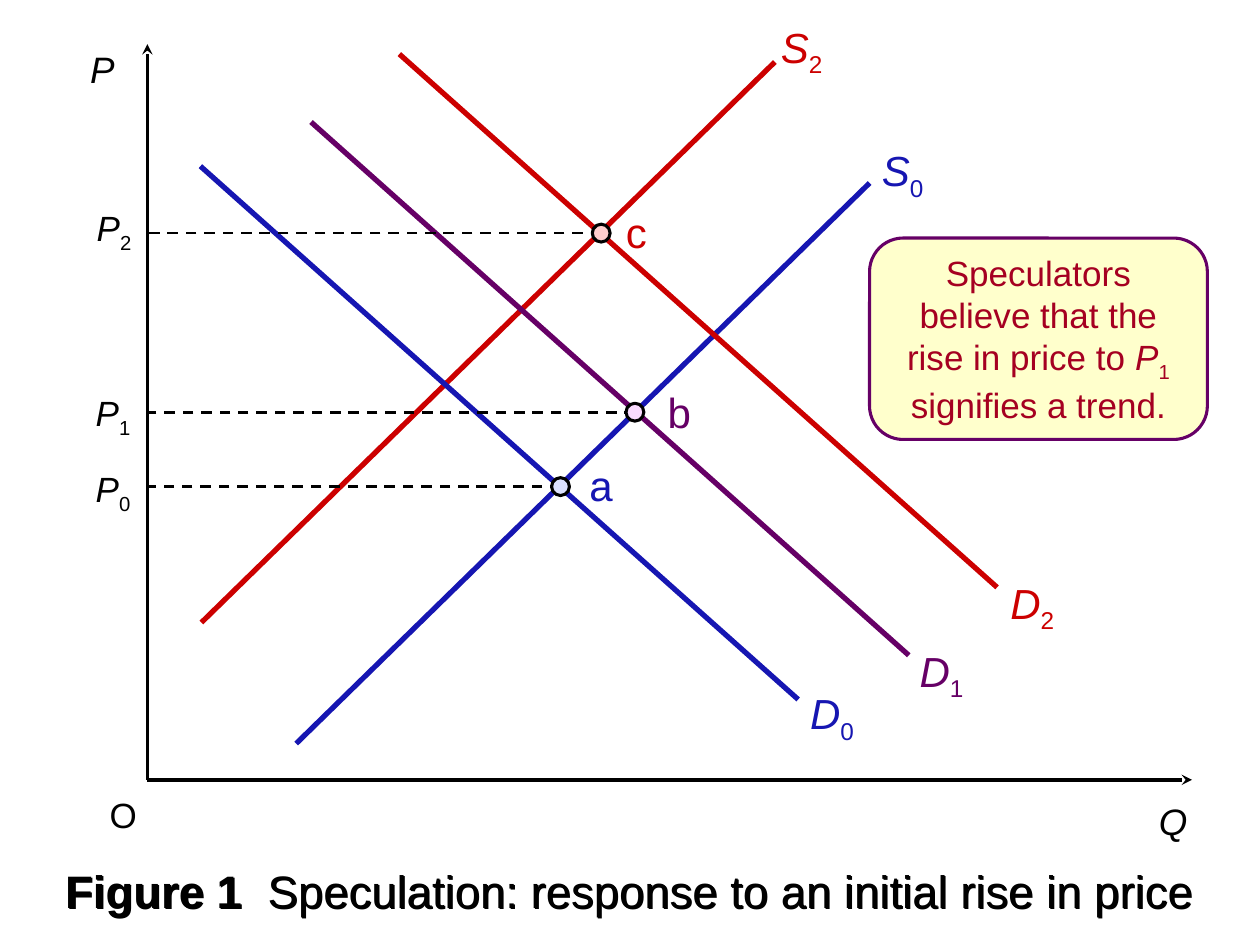
from dataclasses import dataclass

from lxml import etree
from pptx import Presentation
from pptx.dml.color import RGBColor as Rgb
from pptx.enum.dml import MSO_LINE_DASH_STYLE as Dash
from pptx.enum.shapes import MSO_CONNECTOR_TYPE as Connector
from pptx.enum.shapes import MSO_SHAPE as Shape
from pptx.enum.text import MSO_ANCHOR as Anchor
from pptx.enum.text import MSO_AUTO_SIZE as AutoSize
from pptx.enum.text import PP_ALIGN as Align
from pptx.oxml.ns import qn
from pptx.util import Cm, Pt


@dataclass(frozen=True)
class Theme:
    font: str = "Arial"
    black: str = "000000"
    blue: str = "1616B2"
    purple: str = "660066"
    red: str = "CC0000"
    crimson: str = "A50021"
    cream: str = "FFFFCC"
    pale_blue: str = "DCE1FF"
    pale_purple: str = "F9DAFE"
    pale_red: str = "FFCCCC"
    title_size: float = 26
    curve_size: float = 24
    axis_size: float = 21
    price_size: float = 20
    curve_width: float = 3
    axis_width: float = 2
    outline_width: float = 1.75
    guide_width: float = 1.5


THEME = Theme()
PLAIN, BOLD, ITALIC = {}, {"bold": True}, {"italic": True}
SUBSCRIPT = "subscript"


def assign(target, values):
    for name, value in values.items():
        setattr(target, name, value)


def symbol(letter, index):
    return [(letter, ITALIC), (index, SUBSCRIPT)]


class DiagramSlide:
    def __init__(self, slide, theme):
        self.slide = slide
        self.theme = theme

    def add_words(self, frame, runs, size, color, align=Align.LEFT):
        paragraph = frame.paragraphs[0]
        paragraph.alignment = align
        for text, style in runs:
            run = paragraph.add_run()
            run.text = text
            values = {"name": self.theme.font, "size": Pt(size),
                      "bold": False, "italic": False}
            if style == SUBSCRIPT:
                run._r.get_or_add_rPr().set("baseline", "-25000")
            else:
                values.update(style)
            assign(run.font, values)
            run.font.color.rgb = Rgb.from_string(color)

    def title(self, runs, left, top, width, height):
        heading = self.slide.shapes.title
        assign(heading, {"left": Cm(left), "top": Cm(top),
                         "width": Cm(width), "height": Cm(height)})
        assign(heading.text_frame, {"word_wrap": True, "auto_size": AutoSize.NONE,
                                    "vertical_anchor": Anchor.MIDDLE})
        self.add_words(heading.text_frame, runs, self.theme.title_size,
                       self.theme.black, Align.CENTER)
        effects = etree.SubElement(heading._element.spPr, qn("a:effectLst"))
        shadow = etree.SubElement(effects, qn("a:outerShdw"),
                                  dist="12700", dir="2700000")
        etree.SubElement(shadow, qn("a:srgbClr"), val=self.theme.black)

    def label(self, runs, left, top, width, size, color):
        box = self.slide.shapes.add_textbox(Cm(left), Cm(top), Cm(width), Cm(size * 0.054))
        assign(box.text_frame, {"word_wrap": False,
                                "auto_size": AutoSize.SHAPE_TO_FIT_TEXT})
        self.add_words(box.text_frame, runs, size, color)

    def line(self, start, end, color, width, dash=None, arrow=False):
        connector = self.slide.shapes.add_connector(
            Connector.STRAIGHT, *(Cm(value) for value in (*start, *end)))
        connector.line.color.rgb = Rgb.from_string(color)
        assign(connector.line, {"width": Pt(width), "dash_style": dash})
        if arrow:
            etree.SubElement(connector.get_or_add_ln(), qn("a:tailEnd"), type="stealth")
        etree.SubElement(connector._element.spPr, qn("a:effectLst"))

    def shape(self, preset, left, top, width, height, fill, outline):
        figure = self.slide.shapes.add_shape(preset, Cm(left), Cm(top), Cm(width), Cm(height))
        figure.shadow.inherit = False
        figure.fill.solid()
        figure.fill.fore_color.rgb = Rgb.from_string(fill)
        figure.line.color.rgb = Rgb.from_string(outline)
        figure.line.width = Pt(self.theme.outline_width)
        return figure

    def point(self, center, fill, diameter=0.36):
        x, y = center
        self.shape(Shape.OVAL, x - diameter / 2, y - diameter / 2,
                   diameter, diameter, fill, self.theme.black)

    def callout(self, runs, left, top, width, height):
        note = self.shape(Shape.FLOWCHART_ALTERNATE_PROCESS, left, top, width, height,
                          self.theme.cream, self.theme.purple)
        assign(note.text_frame, {"word_wrap": True, "vertical_anchor": Anchor.MIDDLE})
        self.add_words(note.text_frame, runs, self.theme.price_size,
                       self.theme.crimson, Align.CENTER)


def main():
    deck = Presentation()
    assign(deck, {"slide_width": Cm(25.4), "slide_height": Cm(19.05)})
    diagram = DiagramSlide(deck.slides.add_slide(deck.slide_layouts[5]), THEME)

    origin = (2.97, 15.72)
    supply_run, demand_run = (11.56, -11.3), (12.05, 10.75)
    curves = [
        ("S", "2", (4.06, 12.55), supply_run, (15.49, 0.3), THEME.red),
        ("D", "0", (4.04, 3.35), demand_run, (16.08, 13.74), THEME.blue),
        ("D", "1", (6.27, 2.46), demand_run, (18.29, 12.88), THEME.purple),
        ("S", "0", (5.97, 14.99), supply_run, (17.53, 2.79), THEME.blue),
        ("D", "2", (8.05, 1.09), demand_run, (20.12, 11.51), THEME.red),
    ]
    for letter, index, start, run, place, color in curves:
        end = (start[0] + run[0], start[1] + run[1])
        diagram.line(start, end, color, THEME.curve_width)
        diagram.label(symbol(letter, index), *place, 1.42, THEME.curve_size, color)

    equilibria = [
        ("a", "0", (11.3, 9.81), (11.63, 9.14), (1.68, 9.3), THEME.blue, THEME.pale_blue),
        ("b", "1", (12.8, 8.31), (13.21, 7.67), (1.68, 7.77), THEME.purple, THEME.pale_purple),
        ("c", "2", (12.12, 4.7), (12.37, 4.04), (1.7, 4.04), THEME.red, THEME.pale_red),
    ]
    for name, index, center, name_place, price_place, color, fill in equilibria:
        diagram.line(center, (origin[0], center[1]), THEME.black,
                     THEME.guide_width, dash=Dash.DASH)
        diagram.point(center, fill)
        diagram.label([(name, PLAIN)], *name_place, 0.98, THEME.curve_size, color)
        diagram.label(symbol("P", index), *price_place, 1.24, THEME.price_size, THEME.black)

    for end in ((origin[0], 0.89), (24.03, origin[1])):
        diagram.line(origin, end, THEME.black, THEME.axis_width, arrow=True)
    for name, style, left, top, width, size in (
        ("P", ITALIC, 1.57, 0.81, 1.19, THEME.axis_size),
        ("Q", ITALIC, 23.11, 15.98, 1.32, THEME.axis_size),
        ("O", PLAIN, 1.96, 15.88, 1.07, THEME.price_size),
    ):
        diagram.label([(name, style)], left, top, width, size, THEME.black)

    diagram.callout([("Speculators believe that the rise in price to ", PLAIN),
                     *symbol("P", "1"), (" signifies a trend.", PLAIN)],
                    17.53, 4.8, 6.81, 4.06)
    diagram.title([("Figure 1  ", BOLD),
                   ("Speculation: response to an initial rise in price", PLAIN)],
                  0, 17.15, 25.4, 1.6)
    deck.save("out.pptx")


if __name__ == "__main__":
    main()
